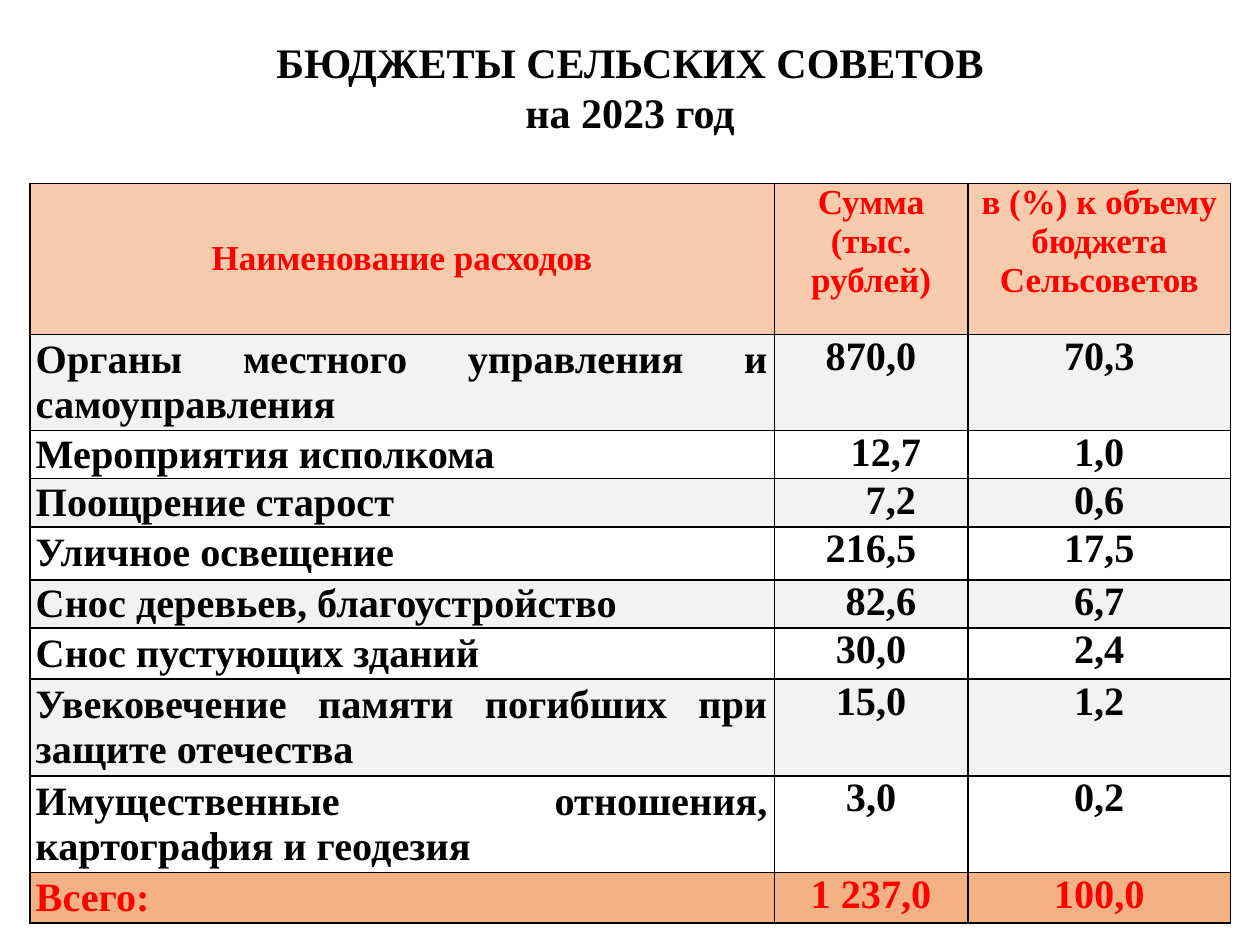
from pptx import Presentation
from pptx.dml.color import RGBColor
from pptx.enum.text import MSO_ANCHOR, MSO_AUTO_SIZE, PP_ALIGN
from pptx.oxml import parse_xml
from pptx.oxml.ns import nsdecls
from pptx.util import Cm, Pt

FONT = "Times New Roman"
COLORS = {"ink": "000000", "red": "FF0000", "head": "F8CBAD",
          "gray": "F2F2F2", "white": "FFFFFF", "total": "F4B183"}

TITLE = ["БЮДЖЕТЫ СЕЛЬСКИХ СОВЕТОВ", "на 2023 год"]
HEAD = ["Наименование расходов",
        "Сумма\n(тыс. рублей)",
        "в (%) к объему бюджета\nСельсоветов"]
# name, sum, share, row height in cm
ROWS = [
    ("Органы местного управления и самоуправления", "870,0", "70,3", 1.94),
    ("Мероприятия исполкома", "12,7", "1,0", 0.97),
    ("Поощрение старост", "7,2", "0,6", 0.97),
    ("Уличное освещение", "216,5", "17,5", 1.07),
    ("Снос деревьев, благоустройство", "82,6", "6,7", 0.97),
    ("Снос пустующих зданий", "30,0", "2,4", 1.03),
    ("Увековечение памяти погибших при защите отечества", "15,0", "1,2", 1.95),
    ("Имущественные отношения, картография и геодезия", "3,0", "0,2", 1.95),
    ("Всего:", "1 237,0", "100,0", 1.02),
]
SHIFTS = {"12,7": 0.6, "7,2": 0.8, "82,6": 0.4}  # extra left margin, cm
WIDTHS = [15.01, 3.9, 5.3]
HEAD_H = 3.04
PAD = 0.12


def write(frame, lines, size, color, align):
    for i, line in enumerate(lines):
        para = frame.paragraphs[0] if i == 0 else frame.add_paragraph()
        para.alignment = align
        run = para.add_run()
        run.text = line
        run.font.name = FONT
        run.font.size = Pt(size)
        run.font.bold = True
        run.font.color.rgb = RGBColor.from_string(COLORS[color])


def frame_cell(cell):
    """Draw a thin line on all four sides of the cell."""
    props = cell._tc.get_or_add_tcPr()
    for i, side in enumerate(("lnL", "lnR", "lnT", "lnB")):
        props.insert(i, parse_xml(
            f'<a:{side} {nsdecls("a")} w="12700"><a:solidFill>'
            f'<a:srgbClr val="{COLORS["ink"]}"/></a:solidFill></a:{side}>'))


def fill_row(table, r, texts, size, color, back):
    for c, text in enumerate(texts):
        cell = table.cell(r, c)
        cell.margin_left = Cm(PAD + SHIFTS.get(text, 0))
        cell.margin_right = Cm(PAD)
        cell.margin_top = cell.margin_bottom = 0
        cell.vertical_anchor = MSO_ANCHOR.TOP if c else MSO_ANCHOR.MIDDLE
        cell.fill.solid()
        cell.fill.fore_color.rgb = RGBColor.from_string(COLORS[back])
        align = PP_ALIGN.CENTER if c or r == 0 else PP_ALIGN.JUSTIFY
        write(cell.text_frame, text.split("\n"), size, color, align)
        frame_cell(cell)


def main():
    deck = Presentation()
    deck.slide_width, deck.slide_height = Cm(25.4), Cm(19.05)
    slide = deck.slides.add_slide(deck.slide_layouts[5])

    title = slide.shapes.title
    title.left, title.top = Cm(0), Cm(0.53)
    title.width, title.height = Cm(25.4), Cm(3.07)
    frame = title.text_frame
    frame.auto_size = MSO_AUTO_SIZE.NONE
    frame.vertical_anchor = MSO_ANCHOR.TOP
    frame.margin_top = Cm(0.2)
    write(frame, TITLE, 24, "ink", PP_ALIGN.CENTER)

    heights = [HEAD_H] + [row[-1] for row in ROWS]
    table = slide.shapes.add_table(
        len(heights), len(WIDTHS), Cm(0.6), Cm(3.7),
        Cm(sum(WIDTHS)), Cm(sum(heights))).table
    for col, width in zip(table.columns, WIDTHS):
        col.width = Cm(width)
    for row, height in zip(table.rows, heights):
        row.height = Cm(height)

    fill_row(table, 0, HEAD, 20, "red", "head")
    for r, (*texts, _) in enumerate(ROWS, 1):
        last = r == len(ROWS)
        back = "total" if last else "gray" if r % 2 else "white"
        fill_row(table, r, texts, 23, "red" if last else "ink", back)

    deck.save("out.pptx")


if __name__ == "__main__":
    main()
